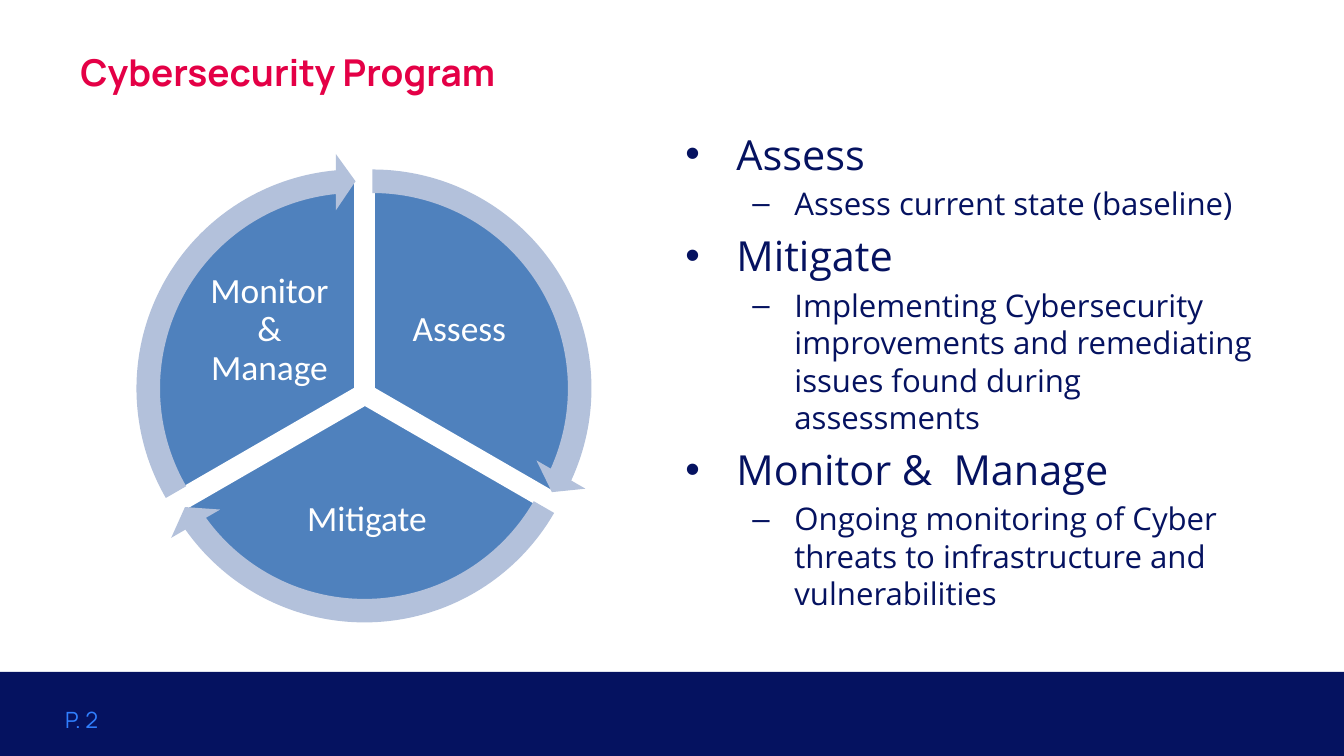
from lxml import etree
from pptx import Presentation
from pptx.dml.color import RGBColor
from pptx.enum.shapes import MSO_SHAPE
from pptx.enum.text import MSO_ANCHOR, MSO_AUTO_SIZE, PP_ALIGN
from pptx.oxml.ns import qn
from pptx.util import Pt

SCALE = 914400 / 134.4  # EMU in one px

NAVY = RGBColor(0x05, 0x12, 0x60)
RED = RGBColor(0xE4, 0x00, 0x46)
SKY = RGBColor(0x30, 0x7F, 0xFF)
BLUE = RGBColor(0x4F, 0x81, 0xBD)
PALE = RGBColor(0xB3, 0xC1, 0xDB)
WHITE = RGBColor(0xFF, 0xFF, 0xFF)

RECT = MSO_SHAPE.RECTANGLE
PIE = MSO_SHAPE.PIE
ARROW = MSO_SHAPE.CIRCULAR_ARROW
MIDDLE, TOP = MSO_ANCHOR.MIDDLE, MSO_ANCHOR.TOP
LEFT, CENTER = PP_ALIGN.LEFT, PP_ALIGN.CENTER
FIXED = MSO_AUTO_SIZE.NONE


def px(n):
    return round(n * SCALE)


def write(para, text, font="Open Sans", size=12, color=NAVY, bold=False,
          align=LEFT, lead=1.0, before=0):
    para.alignment = align
    para.line_spacing = lead
    para.space_before = Pt(before)
    run = para.add_run()
    run.text = text
    run.font.name = font
    run.font.size = Pt(size)
    run.font.bold = bold
    run.font.color.rgb = color


class Deck:
    # Per level: bullet, left margin, hanging indent, size, space before
    levels = [("•", 51, -51, 22.2, 4.4), ("–", 109, -42, 16.7, 3.3)]

    def __init__(self, wide, high):
        self.prs = Presentation()
        self.prs.slide_width, self.prs.slide_height = px(wide), px(high)
        self.slide = self.prs.slides.add_slide(self.prs.slide_layouts[1])
        self.host = self.slide.shapes

    def group(self):
        self.host = self.slide.shapes.add_group_shape().shapes

    def place(self, item, box, anchor):
        item.left, item.top, item.width, item.height = map(px, box)
        frame = item.text_frame
        frame.word_wrap = True
        frame.auto_size = FIXED
        frame.vertical_anchor = anchor
        return frame

    def title(self, text, box):
        frame = self.place(self.slide.shapes.title, box, MIDDLE)
        write(frame.paragraphs[0], text, font="Manrope", size=19.8,
              color=RED, bold=True)

    def bullets(self, items, box):
        frame = self.place(self.slide.placeholders[1], box, TOP)
        for i, (level, text) in enumerate(items):
            para = frame.add_paragraph() if i else frame.paragraphs[0]
            para.level = level
            mark, margin, hang, size, gap = self.levels[level]
            props = para._p.get_or_add_pPr()
            props.set("marL", str(px(margin)))
            props.set("indent", str(px(hang)))
            etree.SubElement(props, qn("a:buFont")).set("typeface", "Arial")
            etree.SubElement(props, qn("a:buChar")).set("char", mark)
            write(para, text, size=size, before=gap if i else 0)

    def label(self, text, box, inset=None, **style):
        item = self.host.add_textbox(*map(px, box))
        frame = self.place(item, box, MIDDLE)
        if inset is not None:
            frame.margin_left = frame.margin_right = px(inset)
            frame.margin_top = frame.margin_bottom = px(inset)
        write(frame.paragraphs[0], text, **style)

    def shape(self, kind, box, fill, edge=None, adjust=()):
        item = self.host.add_shape(kind, *map(px, box))
        item.shadow.inherit = False
        item.fill.solid()
        item.fill.fore_color.rgb = fill
        if edge is None:
            item.line.fill.background()
        else:
            item.line.color.rgb = edge
            item.line.width = Pt(2)
        for i, value in enumerate(adjust):
            item.adjustments[i] = value


def main():
    deck = Deck(1344, 756)

    # Footer band and page number
    deck.shape(RECT, (0, 672, 1344, 84), NAVY)
    deck.label("P. 2", (52, 700, 313, 40), font="Manrope", color=SKY)

    # Title and list
    deck.title("Cybersecurity Program", (67, 44, 1210, 56))
    deck.bullets([
        (0, "Assess"),
        (1, "Assess current state (baseline)"),
        (0, "Mitigate"),
        (1, "Implementing Cybersecurity improvements and remediating "
            "issues found during assessments"),
        (0, "Monitor &  Manage"),
        (1, "Ongoing monitoring of Cyber threats to infrastructure "
            "and vulnerabilities"),
    ], (672, 122, 605, 526))

    # Cycle: name, pie corner, pie angles, label box, arrow angles
    deck.group()
    parts = [
        ("Assess", (163, 179), (162, 18), (385, 268, 149, 125),
         (14.73, 161.99)),
        ("Mitigate", (155, 194), (18, 90), (255, 465, 224, 110),
         (86.72, 18)),
        ("Monitor & Manage", (146, 179), (90, 162), (195, 268, 149, 125),
         (158.73, 90)),
    ]
    for name, corner, angles, box, _ in parts:
        deck.shape(PIE, (*corner, 420, 420), BLUE, WHITE, angles)
        deck.label(name, box, inset=4, font="Calibri", size=19,
                   color=WHITE, align=CENTER, lead=0.9)

    # Arrows around the rim, each 26 px out from its pie
    for _, (x, y), _, _, (tip, tail) in parts:
        deck.shape(ARROW, (x - 26, y - 26, 471, 471), PALE,
                   adjust=(0.05, 3.28, tip, tail, 0.06))

    deck.prs.save("out.pptx")


if __name__ == "__main__":
    main()
